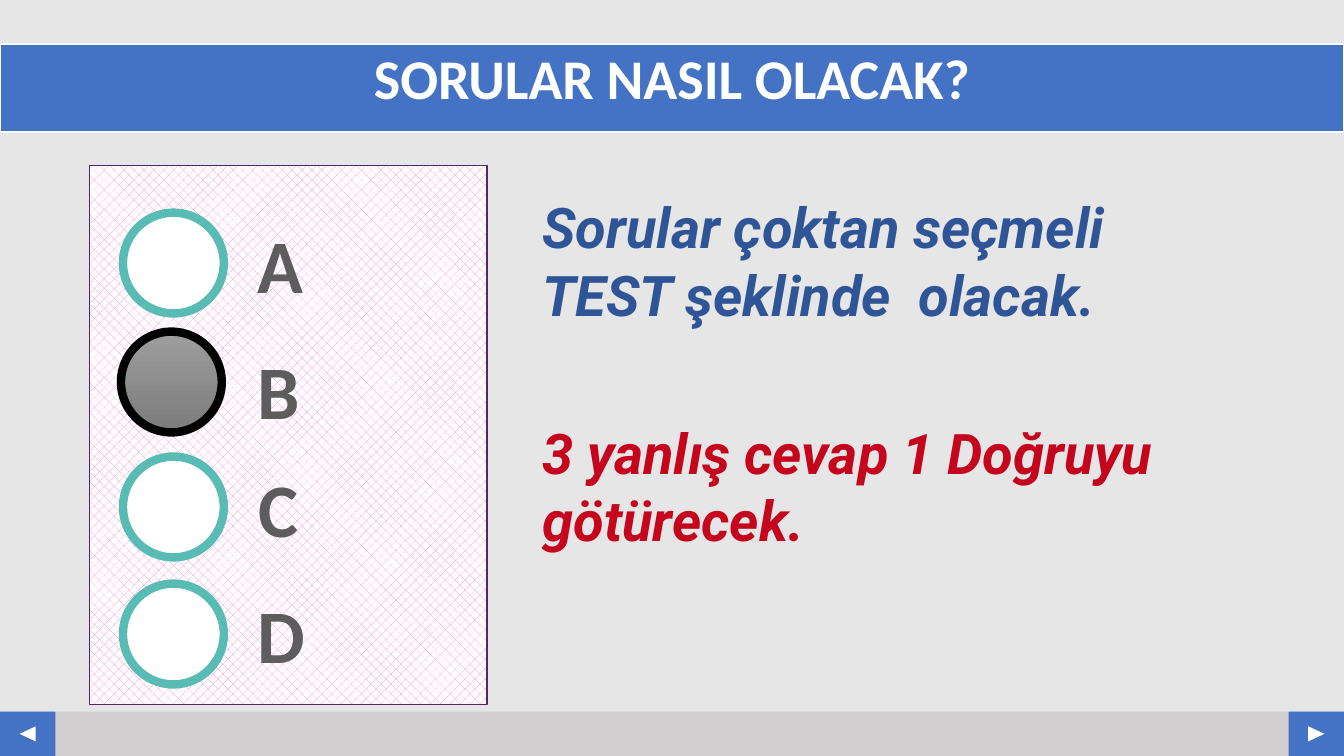
from pptx import Presentation
from pptx.dml.color import RGBColor
from pptx.enum.dml import MSO_PATTERN as Pattern
from pptx.enum.shapes import MSO_SHAPE as Shape
from pptx.enum.text import MSO_ANCHOR as Anchor, PP_ALIGN as Align
from pptx.util import Inches, Pt

BACKGROUND = RGBColor(0xE7, 0xE6, 0xE6)
BAR = RGBColor(0xD0, 0xCE, 0xCE)
BLUE = RGBColor(0x44, 0x72, 0xC4)
DARK_BLUE = RGBColor(0x2F, 0x55, 0x97)
RED = RGBColor(0xC5, 0x04, 0x1D)
WHITE = RGBColor(0xFF, 0xFF, 0xFF)
BLACK = RGBColor(0x00, 0x00, 0x00)
PINK = RGBColor(0xFB, 0x85, 0xD4)
PURPLE = RGBColor(0x52, 0x25, 0x6D)
TEAL = RGBColor(0x58, 0xBB, 0xB4)
LETTER_GRAY = RGBColor(0x5D, 0x5D, 0x5D)
MARK_LIGHT = RGBColor(0x9D, 0x9D, 0x9D)
MARK_DARK = RGBColor(0x7C, 0x7C, 0x7C)

WIDTH, HEIGHT = 13.33, 7.5
BAR_TOP, BAR_HEIGHT, BUTTON_WIDTH = 7.06, 0.44, 0.55
CHOICES = [
    ("A", 1.22, 2.11, 2.11, 0.67),
    ("B", 1.2, 3.29, 3.36, 0.63),
    ("C", 1.22, 4.53, 4.53, 0.63),
    ("D", 1.22, 5.79, 5.78, 0.68),
]


class SlideBuilder:
    """Draws styled elements on the current slide."""

    def __init__(self, slide):
        self.slide = slide
        self.slide.background.fill.solid()
        self.slide.background.fill.fore_color.rgb = BACKGROUND

    def shape(self, kind, left, top, width, height, fill=WHITE, line=None, line_width=1, rotation=0):
        shape = self.slide.shapes.add_shape(
            kind, Inches(left), Inches(top), Inches(width), Inches(height))
        shape.shadow.inherit = False
        shape.rotation = rotation
        shape.fill.solid()
        shape.fill.fore_color.rgb = fill
        if line is None:
            shape.line.fill.background()
        else:
            shape.line.color.rgb = line
            shape.line.width = Pt(line_width)
        return shape

    def set_text(self, shape, text, font, size, color, italic=False, align=Align.LEFT):
        shape.text_frame.text = text
        paragraph = shape.text_frame.paragraphs[0]
        paragraph.alignment = align
        style = paragraph.runs[0].font
        style.name, style.size, style.bold, style.italic = font, Pt(size), True, italic
        style.color.rgb = color
        return paragraph

    def text_box(self, left, top, width, height):
        return self.slide.shapes.add_textbox(
            Inches(left), Inches(top), Inches(width), Inches(height))

    def title(self, text):
        band = self.shape(Shape.RECTANGLE, 0, 0.44, WIDTH, 0.87, BLUE, WHITE, 1.5)
        band.text_frame.vertical_anchor = Anchor.TOP
        band.text_frame.margin_top = Inches(0.07)
        self.set_text(band, text, "Calibri", 40, WHITE, align=Align.CENTER).line_spacing = 0.9

    def statement(self, text, top, color):
        box = self.text_box(5.25, top, 7.09, 1.48)
        frame = box.text_frame
        frame.word_wrap = True
        frame.vertical_anchor = Anchor.MIDDLE
        frame.margin_left = frame.margin_right = Inches(0.13)
        frame.margin_top = frame.margin_bottom = Inches(0.07)
        self.set_text(box, text, "Roboto", 40, color, italic=True)

    def choice(self, letter, left, top, letter_top, letter_width, marked):
        circle = self.shape(Shape.OVAL, left, top, 1, 1, WHITE, BLACK if marked else TEAL, 6)
        if marked:
            circle.fill.gradient()
            circle.fill.gradient_angle = 270
            for stop, color in zip(circle.fill.gradient_stops, (MARK_LIGHT, MARK_DARK)):
                stop.color.rgb = color
        box = self.text_box(2.45, letter_top, letter_width, 1.01)
        box.text_frame.word_wrap = False
        self.set_text(box, letter, "Calibri", 54, LETTER_GRAY, align=Align.CENTER)

    def navigation(self):
        self.shape(Shape.RECTANGLE, 0, BAR_TOP, WIDTH, BAR_HEIGHT, BAR)
        for left, rotation in ((0, 270), (WIDTH - BUTTON_WIDTH, 90)):
            self.shape(Shape.RECTANGLE, left, BAR_TOP, BUTTON_WIDTH, BAR_HEIGHT, BLUE)
            self.shape(Shape.ISOSCELES_TRIANGLE, left + 0.2, 7.2, 0.15, 0.16, rotation=rotation)

    def answer_panel(self):
        panel = self.shape(Shape.RECTANGLE, 0.89, 1.64, 3.94, 5.35, WHITE, PURPLE)
        panel.fill.patterned()
        panel.fill.pattern = Pattern.PERCENT_30
        panel.fill.fore_color.rgb = PINK
        panel.fill.back_color.rgb = WHITE


def main():
    presentation = Presentation()
    presentation.slide_width = Inches(WIDTH)
    presentation.slide_height = Inches(HEIGHT)
    builder = SlideBuilder(presentation.slides.add_slide(presentation.slide_layouts[6]))
    builder.navigation()
    builder.answer_panel()
    builder.title("SORULAR NASIL OLACAK?")
    builder.statement("Sorular çoktan seçmeli TEST şeklinde  olacak.", 1.84, DARK_BLUE)
    for letter, *place in CHOICES:
        builder.choice(letter, *place, marked=letter == "B")
    builder.statement("3 yanlış cevap 1 Doğruyu götürecek.", 4.08, RED)
    presentation.save("out.pptx")


if __name__ == "__main__":
    main()
